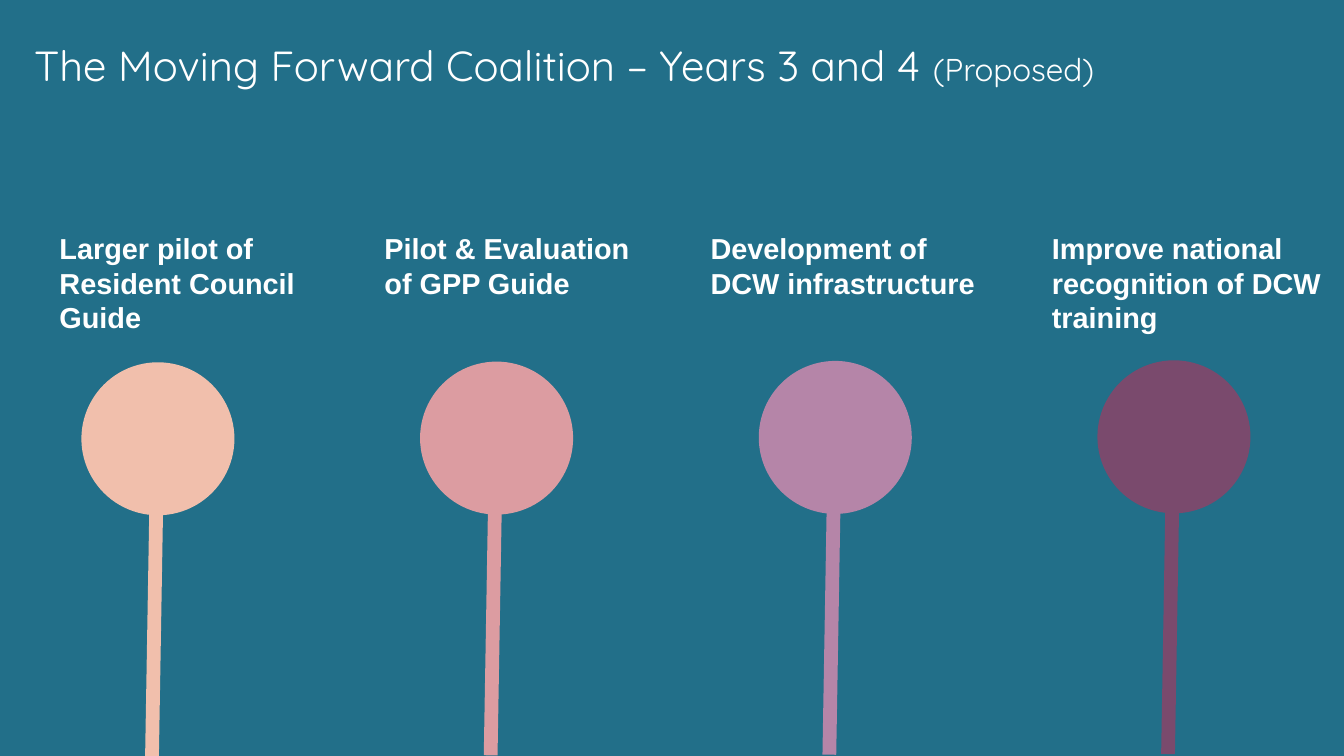
from lxml import etree
from pptx import Presentation
from pptx.dml.color import RGBColor
from pptx.enum.shapes import MSO_CONNECTOR, MSO_SHAPE
from pptx.enum.text import MSO_ANCHOR, MSO_AUTO_SIZE, PP_ALIGN
from pptx.oxml.ns import qn
from pptx.util import Pt

STRAIGHT = MSO_CONNECTOR.STRAIGHT
OVAL = MSO_SHAPE.OVAL
TOP = MSO_ANCHOR.TOP
LEFT = PP_ALIGN.LEFT
GROW = MSO_AUTO_SIZE.SHAPE_TO_FIT_TEXT

TITLE_ONLY = 5
SLIDE_SIZE = (1023.84, 576)
COLORS = {
    "background": "226F89",
    "text": "FFFFFF",
    "peach": "F1BFAC",
    "rose": "DC9CA1",
    "mauve": "B585A8",
    "plum": "7A4A6D",
}

TITLE_BOX = (25.9, 6.5, 972, 67.7)
TITLE_RUNS = [
    ("The Moving Forward Coalition – Years 3 and 4 ", 32),
    ("(Proposed)", 24),
]

# Goal text, pin colour, label left, label width
GOALS = [
    ("Larger pilot of Resident Council Guide", "peach", 38.2, 210.2),
    ("Pilot & Evaluation of GPP Guide", "rose", 285.8, 210.2),
    ("Development of DCW infrastructure", "mauve", 534.2, 221.8),
    ("Improve national recognition of DCW training", "plum", 794.2, 221.8),
]
LABEL_TOP, LABEL_HEIGHT = 172.1, 87.1

# Pins step evenly to the right and rise slightly
PIN_LEFT, PIN_TOP = 62, 276
PIN_STEP, PIN_RISE = 258, 0.5
PIN_DIAMETER, PIN_HEIGHT = 116.6, 300
STEM_START, STEM_LEAN, STEM_WIDTH = 35, 4.5, 10.5


def color(name):
    return RGBColor.from_string(COLORS[name])


def add_run(paragraph, text, **font_format):
    run = paragraph.add_run()
    run.text = text
    run.font.color.rgb = color("text")
    for attribute, value in font_format.items():
        setattr(run.font, attribute, value)


def add_title(slide, box):
    title = slide.shapes.title
    for attribute, value in zip(("left", "top", "width", "height"), box):
        setattr(title, attribute, Pt(value))
    frame = title.text_frame
    frame_format = {
        "margin_left": 0, "margin_right": 0,
        "margin_top": Pt(14.4), "margin_bottom": Pt(7.2),
        "vertical_anchor": TOP, "word_wrap": True, "auto_size": GROW,
    }
    for attribute, value in frame_format.items():
        setattr(frame, attribute, value)
    paragraph = frame.paragraphs[0]
    paragraph.alignment = LEFT
    paragraph.line_spacing = 1.25
    for text, size in TITLE_RUNS:
        add_run(paragraph, text, name="Quicksand", size=Pt(size))


def add_label(slide, box, text):
    frame = slide.shapes.add_textbox(*map(Pt, box)).text_frame
    frame.word_wrap = True
    frame.auto_size = GROW
    add_run(frame.paragraphs[0], text, name="Arial", size=Pt(22), bold=True)


def add_pin(slide, box, fill):
    left, top, width, height = box
    center = left + width / 2

    # Leaning stem
    stem = slide.shapes.add_connector(
        STRAIGHT, Pt(center), Pt(top + STEM_START),
        Pt(center - STEM_LEAN), Pt(top + height))
    stem.line.color.rgb = color(fill)
    stem.line.width = Pt(STEM_WIDTH)
    etree.SubElement(stem.element.spPr, qn("a:effectLst"))

    # Round head
    head = slide.shapes.add_shape(
        OVAL, Pt(left), Pt(top), Pt(width), Pt(width))
    head.shadow.inherit = False
    head.fill.solid()
    head.fill.fore_color.rgb = color(fill)
    head.line.fill.background()


def main():
    presentation = Presentation()
    presentation.slide_width, presentation.slide_height = map(Pt, SLIDE_SIZE)
    slide = presentation.slides.add_slide(
        presentation.slide_layouts[TITLE_ONLY])
    slide.background.fill.solid()
    slide.background.fill.fore_color.rgb = color("background")

    add_title(slide, TITLE_BOX)
    for index, (text, fill, label_left, label_width) in enumerate(GOALS):
        add_pin(slide, (PIN_LEFT + index * PIN_STEP,
                        PIN_TOP - index * PIN_RISE,
                        PIN_DIAMETER, PIN_HEIGHT), fill)
        add_label(slide, (label_left, LABEL_TOP, label_width, LABEL_HEIGHT),
                  text)

    presentation.save("out.pptx")


if __name__ == "__main__":
    main()
